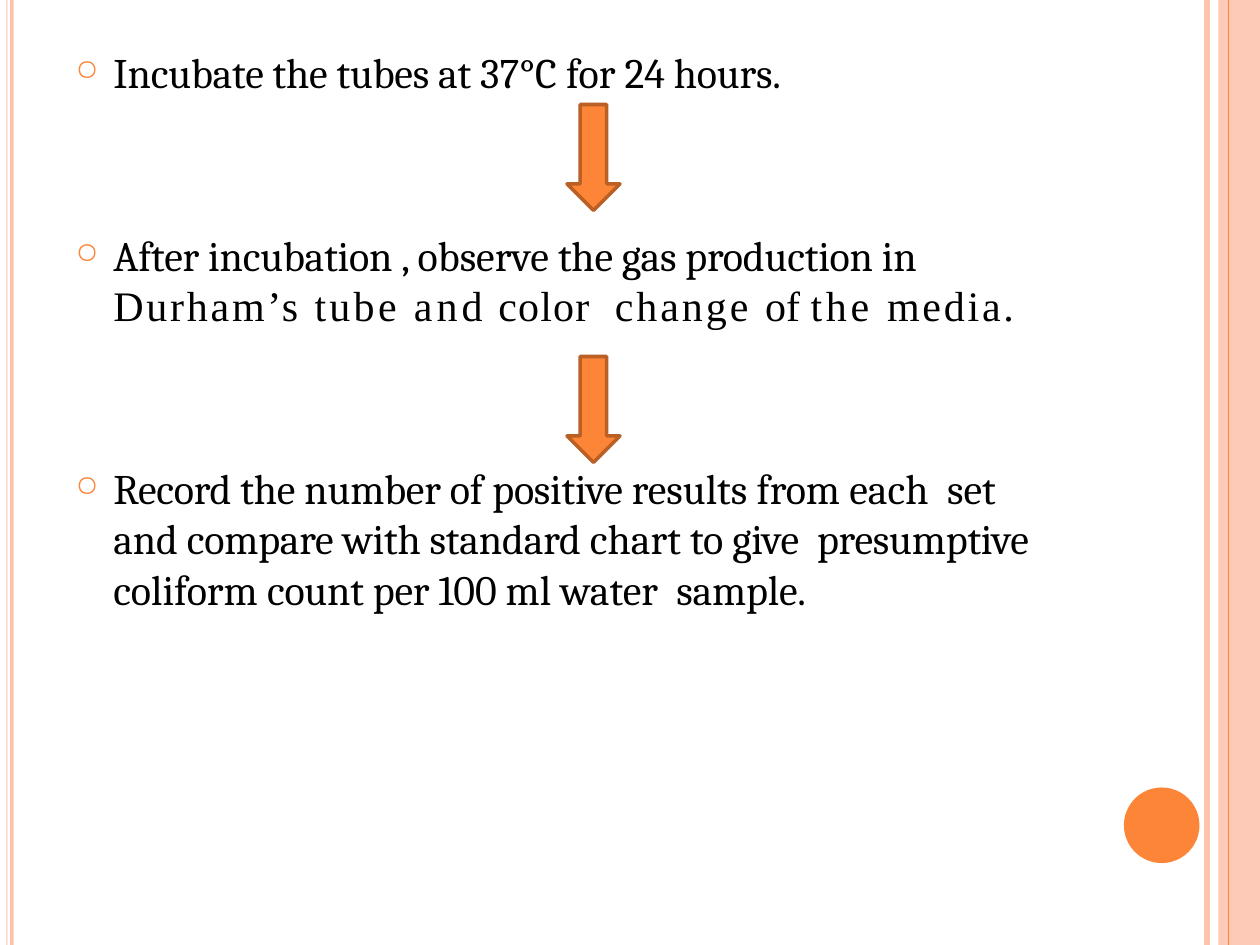
"""Build the tube incubation slide with three steps joined by arrows."""
from typing import NamedTuple

from pptx import Presentation
from pptx.dml.color import RGBColor
from pptx.enum.shapes import MSO_CONNECTOR as Connector, MSO_SHAPE as Shape
from pptx.enum.text import MSO_AUTO_SIZE as AutoSize
from pptx.oxml.ns import qn
from pptx.util import Inches, Pt
from lxml.etree import SubElement

ORANGE, PEACH, BROWN, BLACK = "FD8537", "FDC3AD", "BA6025", "000000"
SERIF, ROMAN = "Cambria", "Times New Roman"
SLIDE_HEIGHT = 7.5


class Span(NamedTuple):
    text: str
    spacing: float = -0.1
    font: str = SERIF


class Step(NamedTuple):
    top: float
    width: float
    height: float
    spans: list[Span]
    tabs: tuple[float, ...] = (0.31,)


class Block(NamedTuple):
    kind: Shape
    left: float
    top: float
    width: float
    height: float
    fill: str = ORANGE
    alpha: int = 100
    line: str = ""


class Rule(NamedTuple):
    left: float
    color: str
    weight: float


RULES = [Rule(9.58, PEACH, 3), Rule(9.75, ORANGE, 0.72)]
BLOCKS = [
    Block(Shape.OVAL, 8.92, 6.25, 0.6, 0.6),
    Block(Shape.RECTANGLE, 0.05, 0, 0.01, SLIDE_HEIGHT, PEACH),
    Block(Shape.RECTANGLE, 0.08, 0, 0.03, SLIDE_HEIGHT, PEACH),
    Block(Shape.RECTANGLE, 9.67, 0, 0.33, SLIDE_HEIGHT, PEACH, 87),
]
ARROWS = [Block(Shape.DOWN_ARROW, 4.5, top, 0.42, 0.84, line=BROWN) for top in (0.83, 2.83)]
STEPS = [
    Step(0.36, 6.5, 0.43, [
        Span("Incubate the tubes at "), Span("37°C for ", 0), Span("24 hours."),
    ]),
    Step(1.81, 7.64, 0.83, [
        Span("After incubation , "), Span("observe ", 0), Span("the gas production in  "),
        Span("Durham’s ", 1.6, ROMAN), Span("tube ", 1.9, ROMAN), Span("and", 2.3, ROMAN),
        Span(" color\t", 0.7, ROMAN), Span("change ", 1.7, ROMAN), Span("of ", 0, ROMAN),
        Span("the ", 2.1, ROMAN), Span("media.", 1.6, ROMAN),
    ], (0.31, 4.29)),
    Step(3.66, 7.7, 1.63, [
        Span("Record the number "), Span("of ", 0), Span("positive "),
        Span("results from each  set ", 0), Span("and compare with standard "),
        Span("chart ", 0), Span("to give  presumptive "), Span("coliform ", 0),
        Span("count per 100 "), Span("ml water  ", 0), Span("sample."),
    ]),
]


def rgb(color: str) -> RGBColor:
    return RGBColor.from_string(color)


def add_rule(page, rule: Rule) -> None:
    left = Inches(rule.left)
    line = page.shapes.add_connector(Connector.STRAIGHT, left, 0, left, Inches(SLIDE_HEIGHT))
    line.line.color.rgb = rgb(rule.color)
    line.line.width = Pt(rule.weight)
    SubElement(line._element.spPr, qn("a:effectLst"))


def add_block(page, block: Block) -> None:
    shape = page.shapes.add_shape(block.kind, *map(Inches, block[1:5]))
    shape.shadow.inherit = False
    shape.fill.solid()
    shape.fill.fore_color.rgb = rgb(block.fill)
    if block.alpha < 100:
        color = shape._element.spPr.find(f".//{qn('a:srgbClr')}")
        SubElement(color, qn("a:alpha"), val=str(block.alpha * 1000))
    if block.line:
        shape.line.color.rgb = rgb(block.line)
        shape.line.width = Pt(2.04)
    else:
        shape.line.fill.background()


def add_bullet(para, tabs: tuple[float, ...]) -> None:
    props = para._p.get_or_add_pPr()
    props.set("marL", str(Inches(0.31)))
    props.set("indent", str(Inches(-0.3)))
    color = SubElement(props, qn("a:buClr"))
    SubElement(color, qn("a:srgbClr"), val=ORANGE)
    SubElement(props, qn("a:buSzPct"), val="69000")
    SubElement(props, qn("a:buChar"), char="○")
    stops = SubElement(props, qn("a:tabLst"))
    for tab in tabs:
        SubElement(stops, qn("a:tab"), pos=str(Inches(tab)), algn="l")


def add_step(page, step: Step) -> None:
    box = page.shapes.add_textbox(*map(Inches, (0.59, step.top, step.width, step.height)))
    frame = box.text_frame
    layout = {"word_wrap": True, "auto_size": AutoSize.SHAPE_TO_FIT_TEXT, "margin_left": 0,
              "margin_top": Inches(0.01), "margin_right": 0, "margin_bottom": 0}
    for name, value in layout.items():
        setattr(frame, name, value)
    para = frame.paragraphs[0]
    para.space_before = Pt(1)
    add_bullet(para, step.tabs)
    for span in step.spans:
        run = para.add_run()
        run.text = span.text
        for name, value in {"name": span.font, "size": Pt(24)}.items():
            setattr(run.font, name, value)
        run.font.color.rgb = rgb(BLACK)
        run._r.get_or_add_rPr().set("spc", str(round(span.spacing * 100)))


def main() -> None:
    deck = Presentation()
    deck.slide_width, deck.slide_height = Inches(10), Inches(SLIDE_HEIGHT)
    page = deck.slides.add_slide(deck.slide_layouts[6])
    for block in BLOCKS:
        add_block(page, block)
    for rule in RULES:
        add_rule(page, rule)
    for step in STEPS:
        add_step(page, step)
    for arrow in ARROWS:
        add_block(page, arrow)
    deck.save("out.pptx")


if __name__ == "__main__":
    main()
